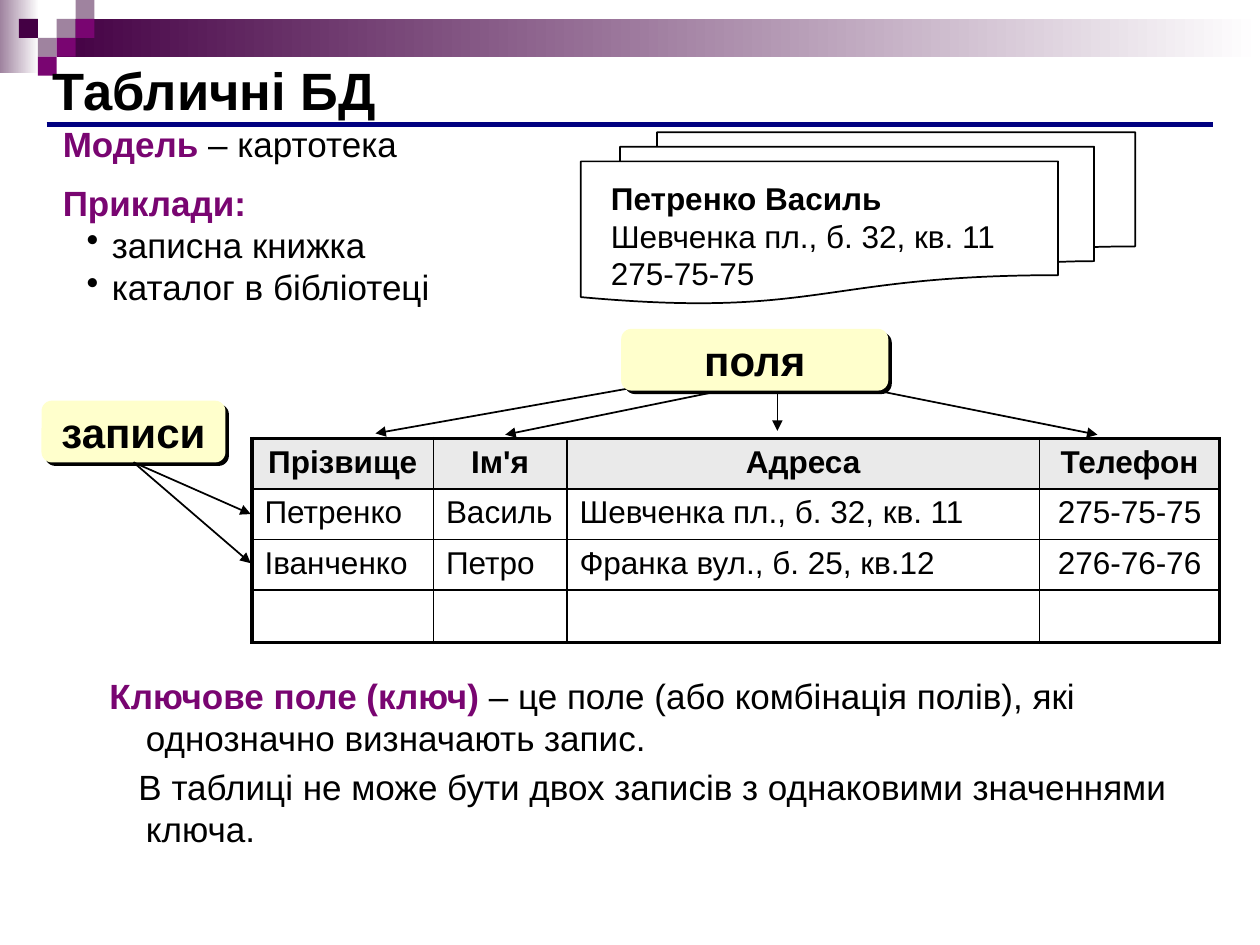
from lxml import etree
from pptx import Presentation
from pptx import util as u
from pptx.dml.color import RGBColor
from pptx.enum import shapes, text
from pptx.oxml.ns import qn

BLACK = RGBColor(0x00, 0x00, 0x00)
NAVY = RGBColor(0x00, 0x00, 0x80)
PLUM = RGBColor(0x79, 0x05, 0x71)
DARK = RGBColor(0x44, 0x00, 0x44)
MAUVE = RGBColor(0x9F, 0x83, 0x9F)
WHITE = RGBColor(0xFF, 0xFF, 0xFF)
CREAM = RGBColor(0xFF, 0xFF, 0xCC)
GREY = RGBColor(0xEA, 0xEA, 0xEA)

COLS, ROWS = 100, 75
WIDTH, HEIGHT = u.Inches(10), u.Inches(7.5)
LEFT, CENTER = text.PP_ALIGN.LEFT, text.PP_ALIGN.CENTER
RECT = shapes.MSO_SHAPE.RECTANGLE


def cx(n):
    """Convert grid columns to a length."""
    return u.Emu(round(WIDTH * n / COLS))


def ry(n):
    """Convert grid rows to a length."""
    return u.Emu(round(HEIGHT * n / ROWS))


def place(box):
    """Convert a box in columns and rows to lengths."""
    x, y, w, h = box
    return cx(x), ry(y), cx(w), ry(h)


def node(parent, tag, **attrs):
    """Append a drawing element to a parent."""
    return etree.SubElement(parent, qn(f"a:{tag}"), {k: str(v) for k, v in attrs.items()})


def color_node(parent, color):
    """Append a solid colour to a parent."""
    node(node(parent, "solidFill"), "srgbClr", val=color)


def add_runs(p, runs, size, align=LEFT):
    """Write (text, bold, colour) runs into a paragraph."""
    p.alignment = align
    for value, bold, color in runs:
        r = p.add_run()
        r.text = value
        style = {"name": "Arial", "size": u.Pt(size), "bold": bold}
        for key, setting in style.items():
            setattr(r.font, key, setting)
        r.font.color.rgb = color


def add_text(s, box, size, lines, wrap=True):
    """Add a text box of (runs, space before, indent, bullet) lines."""
    tf = s.shapes.add_textbox(*place(box)).text_frame
    tf.word_wrap = wrap
    for i, (runs, before, indent, bullet) in enumerate(lines):
        p = tf.paragraphs[0] if i == 0 else tf.add_paragraph()
        add_runs(p, runs, size)
        p.space_before = u.Pt(before)
        pr = p._p.get_or_add_pPr()
        for key, cols in zip(("marL", "indent"), indent):
            pr.set(key, str(cx(cols)))
        if bullet:
            node(pr, "buChar", char="•")


def add_block(s, kind, box, fill=None, line=None):
    """Add a preset shape with a solid, two-colour or empty fill."""
    sp = s.shapes.add_shape(kind, *place(box))
    sp.shadow.inherit = False
    if isinstance(fill, list):
        sp.fill.gradient()
        sp.fill.gradient_angle = 0
        for stop, color in zip(sp.fill.gradient_stops, fill):
            stop.color.rgb = color
    elif fill is None:
        sp.fill.background()
    else:
        sp.fill.solid()
        sp.fill.fore_color.rgb = fill
    if line is None:
        sp.line.fill.background()
    else:
        sp.line.color.rgb = line
        sp.line.width = u.Pt(1)
    return sp


def add_line(s, start, end, color=BLACK, width=1, arrow=True):
    """Draw a straight line, with an arrowhead if wanted."""
    c = s.shapes.add_connector(shapes.MSO_CONNECTOR.STRAIGHT, cx(start[0]), ry(start[1]),
                               cx(end[0]), ry(end[1]))
    c.line.color.rgb = color
    c.line.width = u.Pt(width)
    pr = c._element.spPr
    if arrow:
        node(pr.find(qn("a:ln")), "tailEnd", type="triangle")
    node(pr, "effectLst")
    return c


def banner(s, box):
    """Draw the gradient bands and the mosaic of squares."""
    x, y, w, h = box
    side = h / 4
    add_block(s, RECT, (x, y, 3.1, 5.8), [MAUVE, WHITE])
    add_block(s, RECT, (x + 3 * side, y + side, w - 3 * side, 2 * side), [DARK, WHITE])
    mosaic = {MAUVE: [(2, 1), (3, 0), (1, 2)], DARK: [(0, 1)], PLUM: [(3, 1), (2, 2), (1, 3)]}
    for color, cells in mosaic.items():
        for col, row in cells:
            add_block(s, RECT, (x + (col + 1) * side, y + row * side, side, side), color)


def heading(s, box, title):
    """Write the title above its rule."""
    x, y, w, h = box
    add_line(s, (x + 0.5, y + 5.8), (COLS - x - 0.5, y + 5.8), NAVY, 3, False)
    add_text(s, box, 30, [([(title, True, BLACK)], 0, (0, 0), False)])


def cards(s, box, name, details):
    """Draw a stack of cards with an entry on the front one."""
    x, y, w, h = box
    add_block(s, shapes.MSO_SHAPE.FLOWCHART_MULTIDOCUMENT, box, line=BLACK)
    runs = [(name, True, BLACK)] + [(value, False, BLACK) for value in details]
    add_text(s, (x + 1.4, y + 3.2, 32.8, 10), 18,
             [([run], 0, (0, 0), False) for run in runs], wrap=False)


def label(s, box, caption):
    """Draw a rounded label with a hard shadow."""
    sp = add_block(s, shapes.MSO_SHAPE.ROUNDED_RECTANGLE, box, CREAM)
    effects = sp._element.spPr.find(qn("a:effectLst"))
    shadow = node(effects, "outerShdw", dist=u.Pt(2.8), dir=45 * 60000, algn="ctr", rotWithShape=0)
    node(shadow, "srgbClr", val=BLACK)
    tf = sp.text_frame
    tf.word_wrap = False
    tf.vertical_anchor = text.MSO_ANCHOR.MIDDLE
    add_runs(tf.paragraphs[0], [(caption, True, BLACK)], 24, CENTER)
    return sp


def records(s, box, caption, targets):
    """Point from a label to the table's records."""
    x, y, w, h = box
    sp = label(s, box, caption)
    for target in targets:
        add_line(s, (x + w / 2, y + h), target).begin_connect(sp, 2)


def fields(s, box, caption, arrows):
    """Point from under a label to the table's columns."""
    for start, end in arrows:
        add_line(s, start, end)
    label(s, box, caption)


def table(s, box, widths, heights, rows):
    """Build the framed table with a grey header row."""
    t = s.shapes.add_table(len(rows), len(widths), *place(box)).table
    t.first_row = t.horz_banding = False
    for col, width in zip(t.columns, widths):
        col.width = cx(width)
    last_row, last_col = len(rows) - 1, len(widths) - 1
    for i, values in enumerate(rows):
        t.rows[i].height = ry(heights[i])
        for j, value in enumerate(values):
            cell = t.cell(i, j)
            pr = cell._tc.get_or_add_tcPr()
            outer = {"lnL": j == 0, "lnR": j == last_col, "lnT": i == 0, "lnB": i == last_row}
            for side, thick in outer.items():
                color_node(node(pr, side, w=u.Pt(2.25 if thick else 1)), BLACK)
            if i == 0:
                cell.fill.solid()
                cell.fill.fore_color.rgb = GREY
            else:
                cell.fill.background()
            if value:
                align = CENTER if i == 0 or j == last_col else LEFT
                add_runs(cell.text_frame.paragraphs[0], [(value, i == 0, BLACK)], 18, align)


def main():
    """Build and save the slide."""
    prs = Presentation()
    prs.slide_width, prs.slide_height = WIDTH, HEIGHT
    s = prs.slides.add_slide(prs.slide_layouts[6])
    banner(s, (0, 0, COLS, 6))
    heading(s, (3.2, 4.1, 89, 6), "Табличні БД")
    table(s, (20, 34.8, 76.8, 16.2), [14.4, 10.6, 37.5, 14.3], [4, 4, 4, 4.2], [
        ["Прізвище", "Ім'я", "Адреса", "Телефон"],
        ["Петренко", "Василь", "Шевченка пл., б. 32, кв. 11", "275-75-75"],
        ["Іванченко", "Петро", "Франка вул., б. 25, кв.12", "276-76-76"],
        [""] * 4])
    add_text(s, (4, 9.2, 39.6, 16), 20, [
        ([("Модель", True, PLUM), (" – картотека", False, BLACK)], 0, (0, 0), False),
        ([("Приклади:", True, PLUM)], 10, (0, 0), False),
        ([("записна книжка", False, BLACK)], 0, (3.9, -2), True),
        ([("каталог в бібліотеці", False, BLACK)], 0, (3.9, -2), True)])
    cards(s, (46.1, 10.5, 44, 13.6), "Петренко Василь",
          ["Шевченка пл., б. 32, кв. 11", "275-75-75"])
    records(s, (3.3, 31.8, 14.6, 4.9), "записи", [(19.9, 40.8), (19.9, 44.7)])
    fields(s, (49.3, 26.1, 21.2, 4.9), "поля", [
        ((59.1, 29.2), (29.8, 34.4)), ((61.7, 29.5), (61.7, 34.2)),
        ((59.7, 30.5), (40.1, 34.5)), ((64.1, 29.9), (87.1, 34.5))])
    add_text(s, (7.7, 53, 90.9, 18.8), 20, [
        ([("Ключове поле (ключ)", True, PLUM),
          (" – це поле (або комбінація полів), які однозначно визначають запис.", False, BLACK)],
         4, (2.9, -2.9), False),
        ([("В таблиці не може бути двох записів з однаковими значеннями ключа.", False, BLACK)],
         4, (2.9, -0.6), False)])
    prs.save("out.pptx")


if __name__ == "__main__":
    main()
